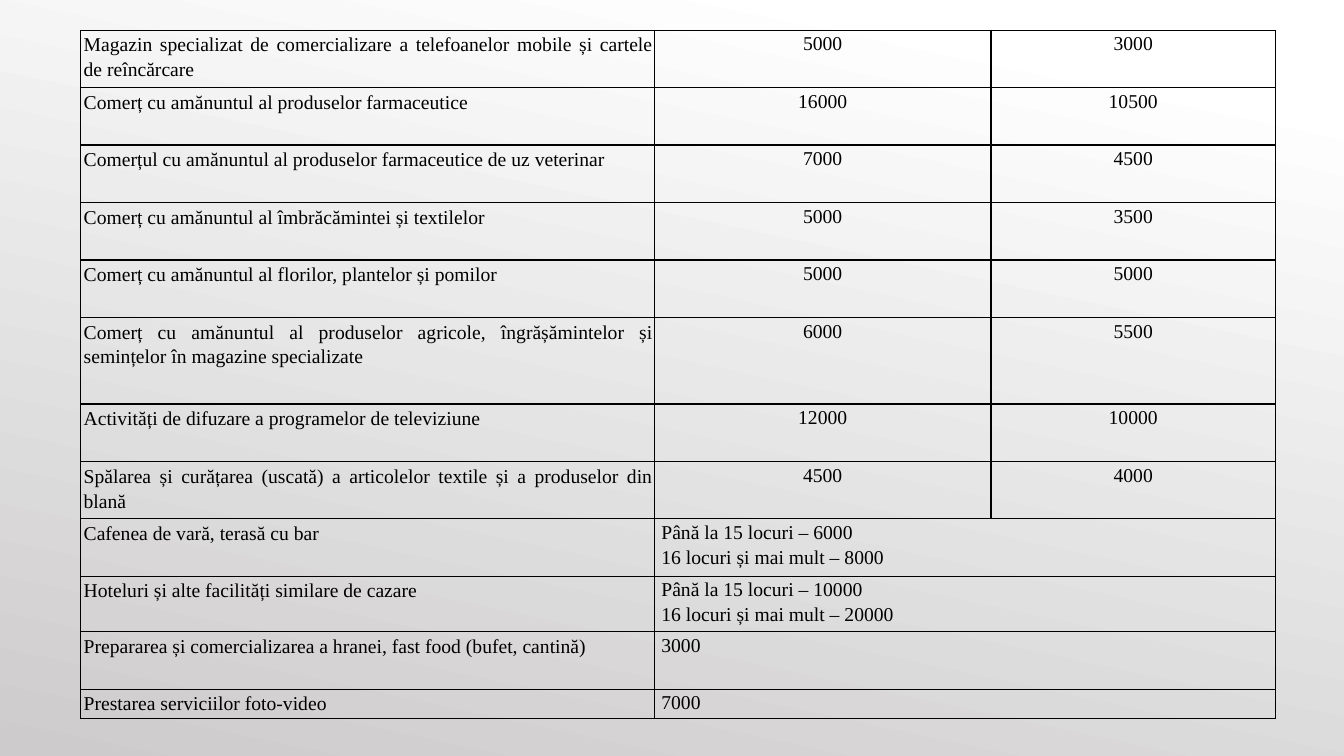
from lxml import etree
from pptx import Presentation, util as u
from pptx.dml.color import RGBColor
from pptx.enum import text
from pptx.oxml import ns

BLACK = RGBColor(0, 0, 0)
WHITE = RGBColor(0xFF, 0xFF, 0xFF)
GRAY = RGBColor(0xCD, 0xCB, 0xCB)
LEFT = text.PP_ALIGN.JUSTIFY
MID = text.PP_ALIGN.CENTER
COLS, ROWS = 1333, 750

FEES = [
    ("Magazin specializat de comercializare a telefoanelor mobile și cartele de reîncărcare", "5000", "3000"),
    ("Comerț cu amănuntul al produselor farmaceutice", "16000", "10500"),
    ("Comerțul cu amănuntul al produselor farmaceutice de uz veterinar", "7000", "4500"),
    ("Comerț cu amănuntul al îmbrăcămintei și textilelor", "5000", "3500"),
    ("Comerț cu amănuntul al florilor, plantelor și pomilor", "5000", "5000"),
    ("Comerț cu amănuntul al produselor agricole, îngrășămintelor și semințelor în magazine specializate", "6000", "5500"),
    ("Activități de difuzare a programelor de televiziune", "12000", "10000"),
    ("Spălarea și curățarea (uscată) a articolelor textile și a produselor din blană", "4500", "4000"),
    ("Cafenea de vară, terasă cu bar", "Până la 15 locuri – 6000\n16 locuri și mai mult – 8000"),
    ("Hoteluri și alte facilități similare de cazare", "Până la 15 locuri – 10000\n16 locuri și mai mult – 20000"),
    ("Prepararea și comercializarea a hranei, fast food (bufet, cantină)", "3000"),
    ("Prestarea serviciilor foto-video", "7000"),
]
WIDTHS = [569, 334, 282]
HEIGHTS = [57] * 5 + [86] + [57] * 3 + [55, 57, 29]


class Deck:
    """Holds the text style, the grid and the current slide."""

    font, size, lead = "Times New Roman", u.Pt(14), 1.15

    def __init__(self):
        self.prs = Presentation()
        self.prs.slide_width = u.Inches(13.33)
        self.prs.slide_height = u.Inches(7.5)
        self.slide = self.prs.slides.add_slide(self.prs.slide_layouts[6])

    def x(self, cols):
        return round(self.prs.slide_width * cols / COLS)

    def y(self, rows):
        return round(self.prs.slide_height * rows / ROWS)

    def shade(self, stops, angle):
        fill = self.slide.background.fill
        fill.gradient()
        fill.gradient_angle = angle
        for stop, (place, color) in zip(fill.gradient_stops, stops):
            stop.position = place
            stop.color.rgb = color

    def border(self, cell):
        props = cell._tc.get_or_add_tcPr()
        for spot, side in enumerate(("a:lnL", "a:lnR", "a:lnT", "a:lnB")):
            line = etree.Element(ns.qn(side), w=str(u.Pt(1)))
            fill = etree.SubElement(line, ns.qn("a:solidFill"))
            etree.SubElement(fill, ns.qn("a:srgbClr"), val=str(BLACK))
            props.insert(spot, line)

    def label(self, cell, words, align, pads):
        (cell.margin_left, cell.margin_top,
         cell.margin_right, cell.margin_bottom) = map(u.Inches, pads)
        frame = cell.text_frame
        for i, line in enumerate(words.split("\n")):
            para = frame.add_paragraph() if i else frame.paragraphs[0]
            para.alignment = align
            para.line_spacing = self.lead
            run = para.add_run()
            run.text = line
            run.font.name = self.font
            run.font.size = self.size
            run.font.color.rgb = BLACK

    def table(self, left, top, widths, heights, data):
        table = self.slide.shapes.add_table(
            len(heights), len(widths), self.x(left), self.y(top),
            self.x(sum(widths)), self.y(sum(heights))).table
        table.first_row = table.horz_banding = False
        for col, wide in zip(table.columns, widths):
            col.width = self.x(wide)
        for row, high in zip(table.rows, heights):
            row.height = self.y(high)
        for cell in table.iter_cells():
            cell.fill.background()
            self.border(cell)
        for r, (name, *fees) in enumerate(data):
            self.label(table.cell(r, 0), name, LEFT, (0.03, 0.01, 0.01, 0.01))
            wide = len(fees) == 1
            if wide:
                table.cell(r, 1).merge(table.cell(r, 2))
            for c, fee in enumerate(fees, 1):
                self.label(table.cell(r, c), fee, LEFT if wide else MID, (0.07, 0, 0.07, 0))


def main():
    deck = Deck()
    deck.shade([(0.1, WHITE), (1, GRAY)], 258)
    deck.table(80, 30, WIDTHS, HEIGHTS, FEES)
    deck.prs.save("out.pptx")


if __name__ == "__main__":
    main()
